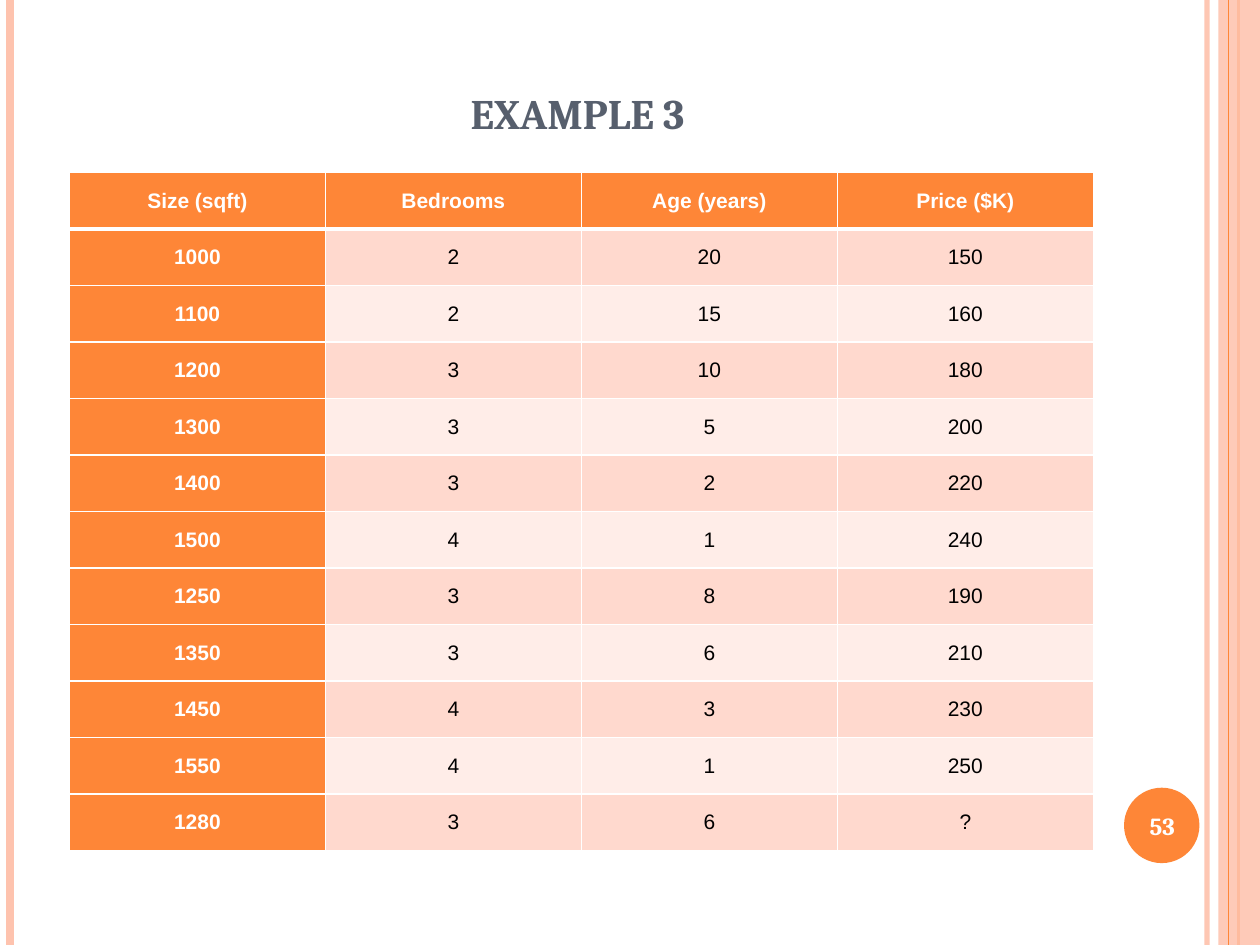
from dataclasses import dataclass

from lxml.etree import SubElement
from pptx import Presentation
from pptx.dml.color import RGBColor
from pptx.enum.shapes import MSO_CONNECTOR, MSO_SHAPE
from pptx.enum.text import MSO_ANCHOR, PP_ALIGN
from pptx.oxml.ns import qn
from pptx.util import Cm, Pt

# Content
TITLE = "example 3"
PAGE_NUMBER = "53"
HEADINGS = ("Size (sqft)", "Bedrooms", "Age (years)", "Price ($K)")
HOUSES = [
    (1000, 2, 20, 150),
    (1100, 2, 15, 160),
    (1200, 3, 10, 180),
    (1300, 3, 5, 200),
    (1400, 3, 2, 220),
    (1500, 4, 1, 240),
    (1250, 3, 8, 190),
    (1350, 3, 6, 210),
    (1450, 4, 3, 230),
    (1550, 4, 1, 250),
    (1280, 3, 6, "?"),
]


@dataclass(frozen=True)
class Theme:
    accent: str = "FE8637"
    stripe: str = "FEC3AE"
    bands: tuple = ("FFD9CE", "FFEDE8")
    title: str = "575F6D"
    dark: str = "000000"
    light: str = "FFFFFF"
    heading_font: str = "Cambria"
    body_font: str = "Arial"
    title_size: float = 30
    number_size: float = 14
    table_size: float = 12


THEME = Theme()
WIDTH, HEIGHT = 25.4, 19.05
COLUMN_WIDTH, ROW_HEIGHT = 5.16, 1.14


def rgb(color):
    return RGBColor.from_string(color)


def set_alpha(color_parent, percent):
    for color in color_parent.iter(qn("a:srgbClr")):
        SubElement(color, qn("a:alpha"), val=str(percent * 1000))


def write(frame, text, font, size, color, bold=True):
    frame.text = text
    paragraph = frame.paragraphs[0]
    paragraph.alignment = PP_ALIGN.CENTER
    run = paragraph.runs[0]
    run.font.name, run.font.size, run.font.bold = font, Pt(size), bold
    run.font.color.rgb = rgb(color)
    return run


def add_rule(slide, x, color, width, alpha=None):
    rule = slide.shapes.add_connector(MSO_CONNECTOR.STRAIGHT, Cm(x), 0, Cm(x), Cm(HEIGHT))
    rule.line.color.rgb = rgb(color)
    rule.line.width = Pt(width)
    properties = rule._element.spPr
    if alpha:
        set_alpha(properties, alpha)
    SubElement(properties, qn("a:effectLst"))


def add_plain_shape(slide, kind, left, top, width, height, color):
    shape = slide.shapes.add_shape(kind, Cm(left), Cm(top), Cm(width), Cm(height))
    shape.shadow.inherit = False
    shape.fill.solid()
    shape.fill.fore_color.rgb = rgb(color)
    shape.line.fill.background()
    return shape


def add_text(slide, left, top, width, height, anchor, text, size, color):
    box = slide.shapes.add_textbox(Cm(left), Cm(top), Cm(width), Cm(height))
    box.text_frame.word_wrap = True
    box.text_frame.vertical_anchor = anchor
    return write(box.text_frame, text, THEME.heading_font, size, color)


def set_borders(cell, **widths):
    properties = cell._tc.get_or_add_tcPr()
    for position, side in enumerate(("L", "R", "T", "B")):
        line = properties.makeelement(qn(f"a:ln{side}"), {"w": str(Pt(widths.get(side, 1)))})
        fill = SubElement(line, qn("a:solidFill"))
        SubElement(fill, qn("a:srgbClr"), val=THEME.light)
        properties.insert(position, line)


def add_house_table(slide):
    rows = [HEADINGS, *HOUSES]
    table = slide.shapes.add_table(
        len(rows), len(HEADINGS), Cm(1.4), Cm(3.48),
        Cm(COLUMN_WIDTH * len(HEADINGS)), Cm(ROW_HEIGHT * len(rows)),
    ).table
    table.first_col = True
    for column in table.columns:
        column.width = Cm(COLUMN_WIDTH)
    for r, values in enumerate(rows):
        table.rows[r].height = Cm(ROW_HEIGHT)
        for c, value in enumerate(values):
            cell = table.cell(r, c)
            is_label = r == 0 or c == 0
            cell.margin_left = cell.margin_right = Cm(0.03)
            cell.margin_top = cell.margin_bottom = Cm(0.03)
            cell.vertical_anchor = MSO_ANCHOR.MIDDLE
            cell.fill.solid()
            cell.fill.fore_color.rgb = rgb(THEME.accent if is_label else THEME.bands[(r - 1) % 2])
            write(cell.text_frame, str(value), THEME.body_font, THEME.table_size,
                  THEME.light if is_label else THEME.dark, is_label)
            # Thick rule between the headings and the data
            set_borders(cell, T=3 if r == 1 else 1, B=3 if r == 0 else 1)


def main():
    presentation = Presentation()
    presentation.slide_width, presentation.slide_height = Cm(WIDTH), Cm(HEIGHT)
    slide = presentation.slides.add_slide(presentation.slide_layouts[6])

    # Side stripes
    add_rule(slide, 24.33, THEME.stripe, 3, alpha=93)
    add_rule(slide, 0.2, THEME.stripe, 4.5)
    add_rule(slide, 24.97, THEME.accent, 1.5)
    band = add_plain_shape(slide, MSO_SHAPE.RECTANGLE, 24.56, 0, 0.84, HEIGHT, THEME.stripe)
    set_alpha(band._element.spPr, 87)
    add_rule(slide, 24.77, THEME.accent, 0.75)

    # Page number disc
    add_plain_shape(slide, MSO_SHAPE.OVAL, 22.66, 15.88, 1.52, 1.52, THEME.accent)

    # Title in small capitals
    title = add_text(slide, 1.27, 0.97, 20.75, 1.98, MSO_ANCHOR.BOTTOM,
                     TITLE, THEME.title_size, THEME.title)
    title.font._element.set("cap", "small")

    add_house_table(slide)

    # Page number
    add_text(slide, 22.58, 15.93, 1.7, 1.45, MSO_ANCHOR.MIDDLE,
             PAGE_NUMBER, THEME.number_size, THEME.light)

    presentation.save("out.pptx")


if __name__ == "__main__":
    main()
